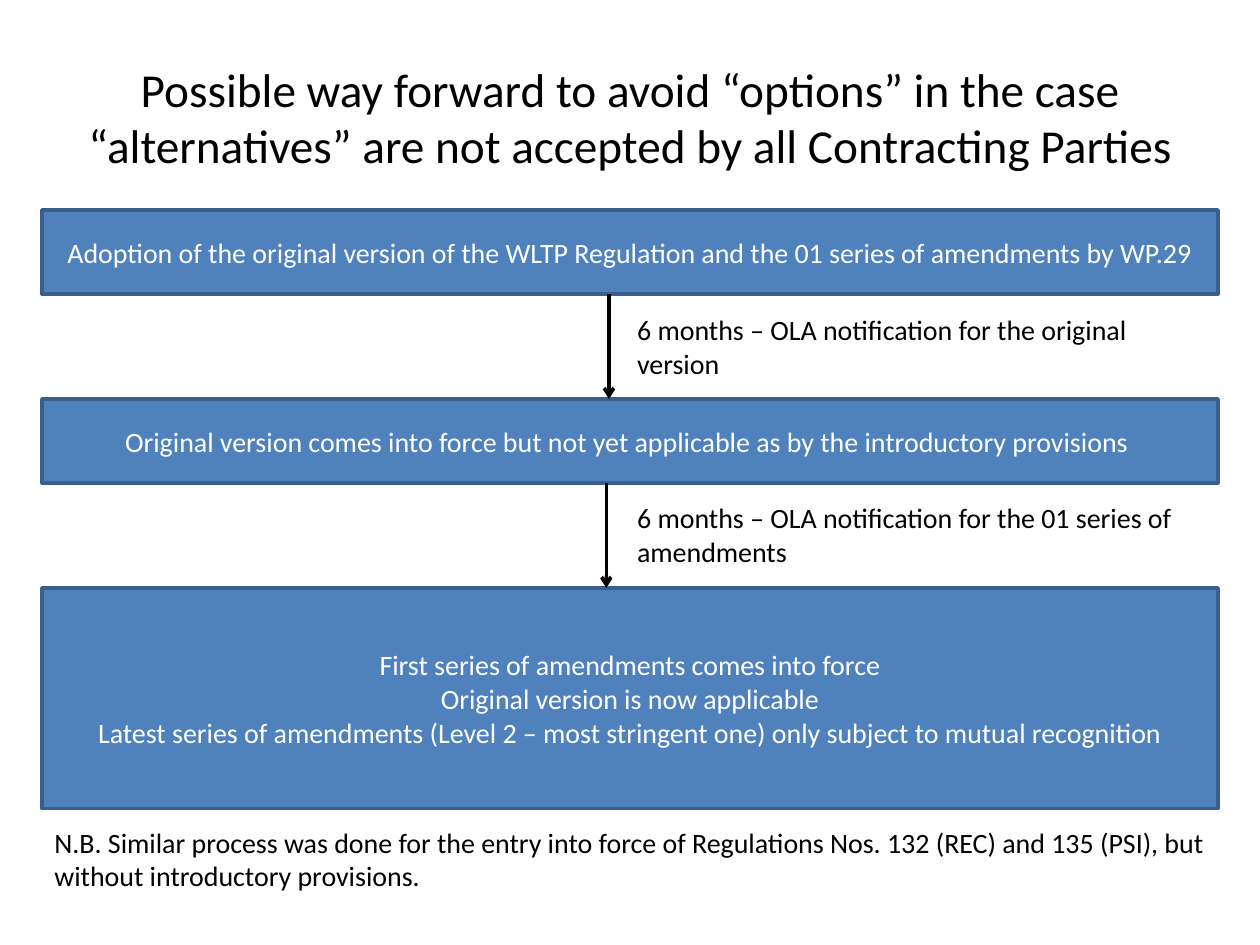
from lxml.etree import SubElement
from pptx import Presentation
from pptx.dml.color import RGBColor
from pptx.enum.shapes import MSO_CONNECTOR, MSO_SHAPE
from pptx.enum.text import MSO_ANCHOR, PP_ALIGN
from pptx.oxml.ns import qn
from pptx.util import Pt

BLACK, WHITE, BLUE, DARK_BLUE = "000000", "FFFFFF", "4F81BD", "3A5F8C"
LEFT, WIDTH = 24, 672

# top, height, lines of text
STEPS = [
    (120, 48, ["Adoption of the original version of the WLTP Regulation "
               "and the 01 series of amendments by WP.29"]),
    (228, 48, ["Original version comes into force but not yet applicable "
               "as by the introductory provisions "]),
    (336, 126, ["First series of amendments comes into force",
                "Original version is now applicable",
                "Latest series of amendments (Level 2 – most stringent one) "
                "only subject to mutual recognition"]),
]
# arrow x, label top, label width, label
TRANSITIONS = [
    (348, 175, 309, "6 months – OLA notification for the original version"),
    (346.5, 282.5, 333, "6 months – OLA notification for the 01 series of amendments"),
]


def color(hex_value):
    return RGBColor.from_string(hex_value)


def write(shape, lines, size=16, font_color=BLACK, align=PP_ALIGN.LEFT, anchor=MSO_ANCHOR.TOP):
    frame = shape.text_frame
    frame.word_wrap = True
    frame.vertical_anchor = anchor
    for index, line in enumerate(lines):
        paragraph = frame.add_paragraph() if index else frame.paragraphs[0]
        paragraph.alignment = align
        run = paragraph.add_run()
        run.text = line
        run.font.name = "Calibri"
        run.font.size = Pt(size)
        run.font.color.rgb = color(font_color)


def add_text(slide, left, top, width, height, text, **style):
    box = slide.shapes.add_textbox(Pt(left), Pt(top), Pt(width), Pt(height))
    write(box, [text], **style)


def add_step(slide, left, top, width, height, lines):
    shape = slide.shapes.add_shape(MSO_SHAPE.RECTANGLE, Pt(left), Pt(top), Pt(width), Pt(height))
    shape.shadow.inherit = False
    shape.fill.solid()
    shape.fill.fore_color.rgb = color(BLUE)
    shape.line.color.rgb = color(DARK_BLUE)
    shape.line.width = Pt(2)
    write(shape, lines, font_color=WHITE, align=PP_ALIGN.CENTER, anchor=MSO_ANCHOR.MIDDLE)


def add_down_arrow(slide, x, top, bottom):
    connector = slide.shapes.add_connector(
        MSO_CONNECTOR.STRAIGHT, Pt(x), Pt(top), Pt(x), Pt(bottom))
    connector.line.color.rgb = color(BLACK)
    connector.line.width = Pt(2)
    SubElement(connector.line._get_or_add_ln(), qn("a:tailEnd"), type="arrow")
    SubElement(connector._element.spPr, qn("a:effectLst"))


def add_flow(slide, left, width):
    """Stack the steps and join each one to the next with a labelled arrow."""
    for top, height, lines in STEPS:
        add_step(slide, left, top, width, height, lines)
    for upper, lower, transition in zip(STEPS, STEPS[1:], TRANSITIONS):
        x, label_top, label_width, label = transition
        add_down_arrow(slide, x, upper[0] + upper[1], lower[0])
        add_text(slide, left + 333, label_top, label_width, 46, label)


def main():
    presentation = Presentation()
    presentation.slide_width, presentation.slide_height = Pt(720), Pt(540)
    slide = presentation.slides.add_slide(presentation.slide_layouts[6])
    add_text(slide, 36, 21.6, 648, 90,
             "Possible way forward to avoid “options” in the case "
             "“alternatives” are not accepted by all Contracting Parties",
             size=27, align=PP_ALIGN.CENTER, anchor=MSO_ANCHOR.MIDDLE)
    add_flow(slide, LEFT, WIDTH)
    add_text(slide, LEFT, 468, WIDTH, 46,
             "N.B. Similar process was done for the entry into force of Regulations "
             "Nos. 132 (REC) and 135 (PSI), but without introductory provisions.")
    presentation.save("out.pptx")


if __name__ == "__main__":
    main()
